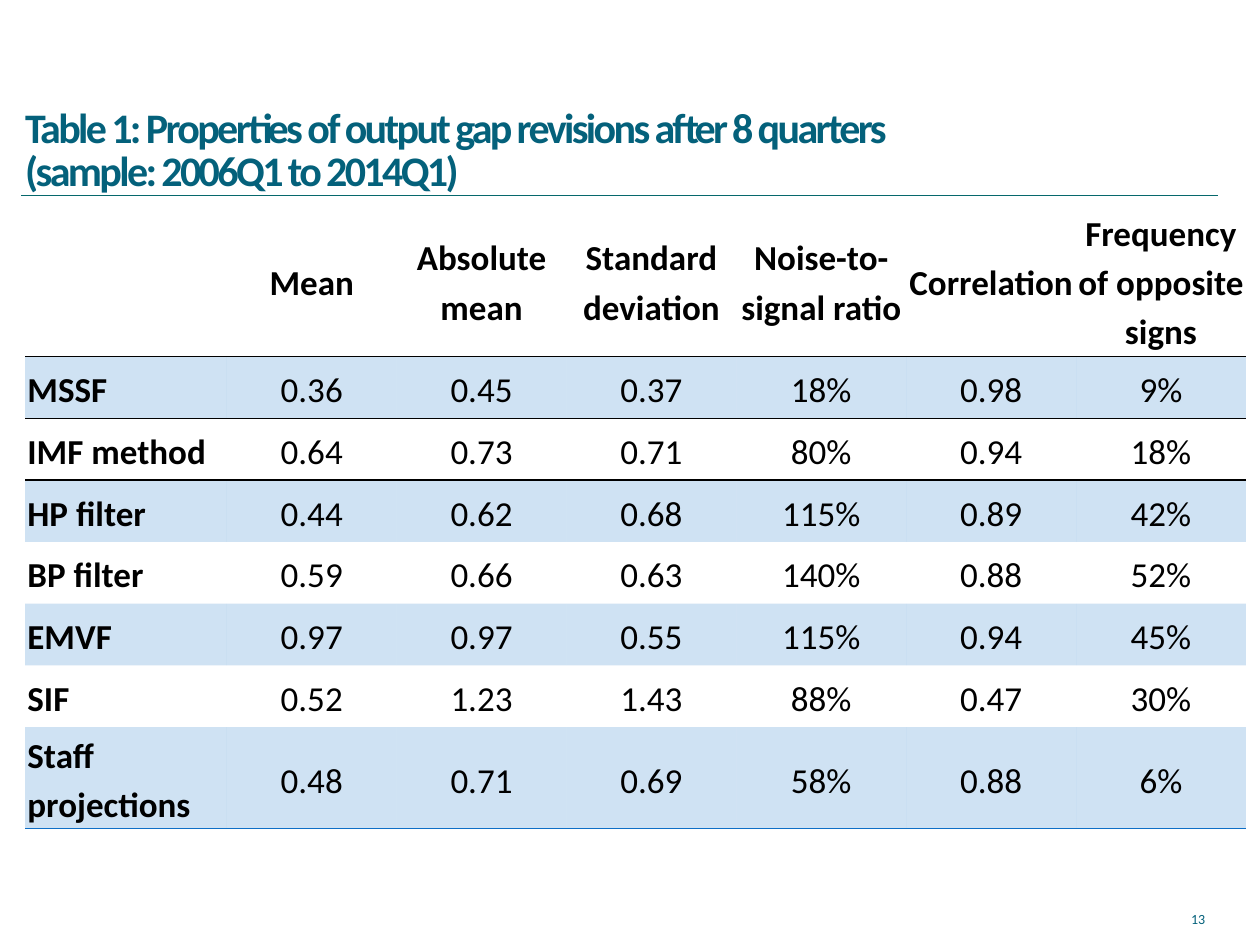
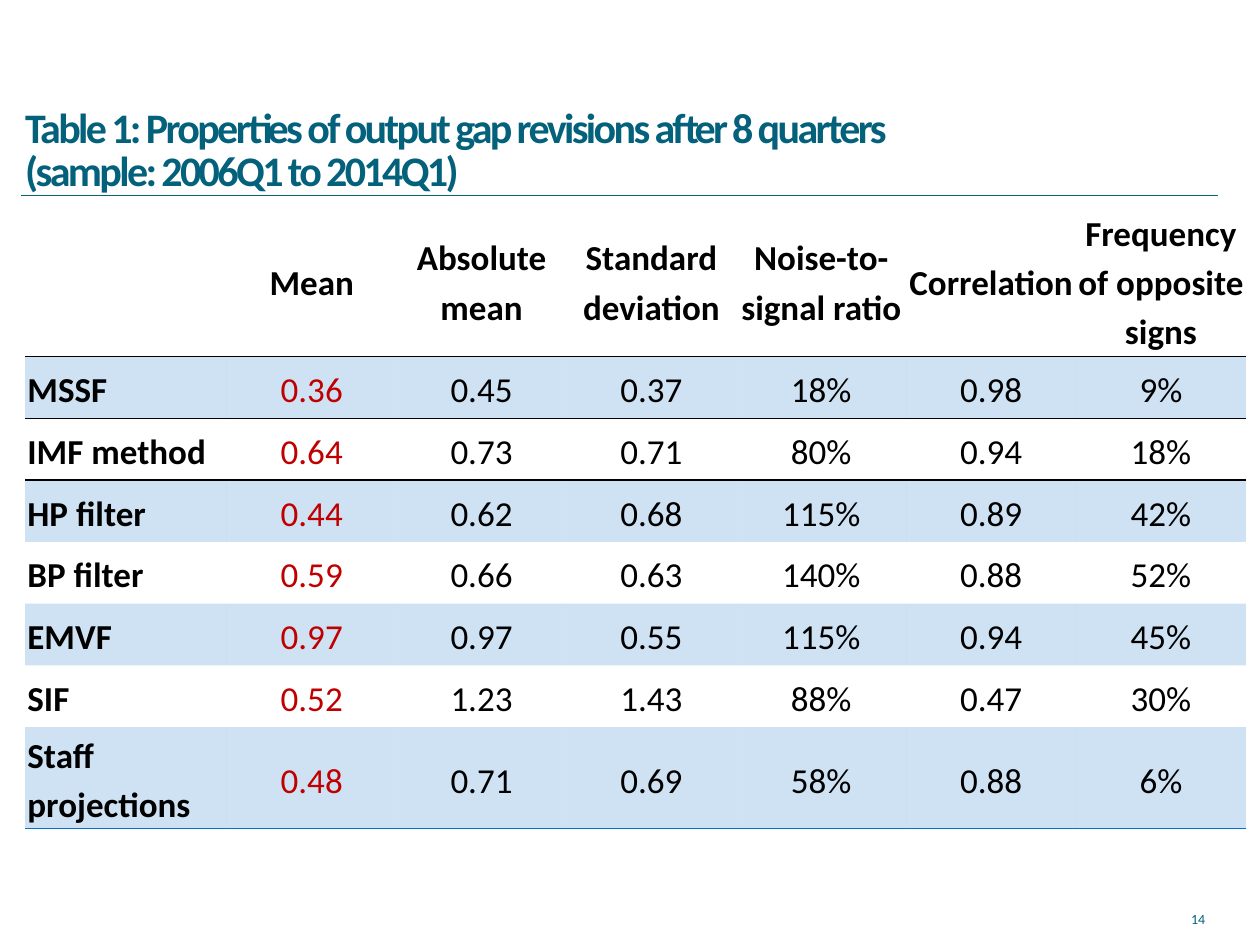
from lxml.etree import SubElement
from pptx import Presentation
from pptx.dml.color import RGBColor
from pptx.enum.shapes import MSO_CONNECTOR
from pptx.enum.text import MSO_ANCHOR, MSO_AUTO_SIZE, PP_ALIGN
from pptx.oxml.ns import qn
from pptx.util import Pt

TITLE = "Table 1: Properties of output gap revisions after 8 quarters\v(sample: 2006Q1 to 2014Q1)"
HEADINGS = ["", "Mean", "Absolute mean", "Standard deviation",
            "Noise-to-signal ratio", "Correlation", "Frequency of opposite signs"]
METHODS = [
    ("MSSF", "0.36", "0.45", "0.37", "18%", "0.98", "9%"),
    ("IMF method", "0.64", "0.73", "0.71", "80%", "0.94", "18%"),
    ("HP filter", "0.44", "0.62", "0.68", "115%", "0.89", "42%"),
    ("BP filter", "0.59", "0.66", "0.63", "140%", "0.88", "52%"),
    ("EMVF", "0.97", "0.97", "0.55", "115%", "0.94", "45%"),
    ("SIF", "0.52", "1.23", "1.43", "88%", "0.47", "30%"),
    ("Staff projections", "0.48", "0.71", "0.69", "58%", "0.88", "6%"),
]
FIRST_PAGE = 13
HIGHLIGHTED_COLUMNS = [None, HEADINGS.index("Mean")]

COLORS = {"title": "04617B", "rule": "06686C", "text": "000000",
          "highlight": "C00000", "band": "0F6FC6"}
BAND_OPACITY = 20
COLUMN_WIDTHS = [115.2] + [97.08] * 6
ROW_HEIGHTS = [87.2] + [35.3] * 6 + [58]
RULES_BELOW_ROW = {0: "text", 1: "text", len(METHODS): "band"}
NO_TABLE_STYLE = "{2D5ABB26-0587-4C30-8999-92F81FD0307C}"


def set_attributes(target, values):
    for name, value in values.items():
        setattr(target, name, value)


def format_font(font, size, color, bold=False):
    set_attributes(font, {"name": "Calibri", "size": Pt(size), "bold": bold})
    font.color.rgb = RGBColor.from_string(COLORS[color])


def place(shape, left, top, width, height):
    set_attributes(shape, {"left": Pt(left), "top": Pt(top),
                           "width": Pt(width), "height": Pt(height)})


def add_title(slide):
    title = slide.shapes.title
    place(title, 14.4, 37.4, 684, 74.2)
    frame = title.text_frame
    set_attributes(frame, {
        "text": TITLE, "word_wrap": True, "auto_size": MSO_AUTO_SIZE.NONE,
        "vertical_anchor": MSO_ANCHOR.BOTTOM, "margin_left": 0,
        "margin_top": Pt(7.2), "margin_right": 0, "margin_bottom": 0})
    paragraph = frame.paragraphs[0]
    set_attributes(paragraph, {"alignment": PP_ALIGN.LEFT, "line_spacing": 0.85})
    for run in paragraph.runs:
        format_font(run.font, 24, "title", True)
        run.font._element.set("spc", "-150")


def add_title_rule(slide):
    rule = slide.shapes.add_connector(
        MSO_CONNECTOR.STRAIGHT, Pt(12.2), Pt(111.6), Pt(696.2), Pt(111.6))
    rule.line.color.rgb = RGBColor.from_string(COLORS["rule"])
    rule.line.width = Pt(0.75)
    SubElement(rule._element.spPr, qn("a:effectLst"))


def add_page_number(slide, number):
    box = slide.shapes.add_textbox(Pt(527.8), Pt(516.2), Pt(168), Pt(18))
    set_attributes(box.text_frame, {"text": str(number), "word_wrap": True,
                                    "vertical_anchor": MSO_ANCHOR.MIDDLE})
    paragraph = box.text_frame.paragraphs[0]
    paragraph.alignment = PP_ALIGN.RIGHT
    format_font(paragraph.runs[0].font, 8, "title")


def add_borders(cell, row):
    properties = cell._tc.get_or_add_tcPr()
    for side, rule_row in (("a:lnT", row - 1), ("a:lnB", row)):
        if rule_row in RULES_BELOW_ROW:
            border = SubElement(properties, qn(side), w=str(Pt(1)))
            fill = SubElement(border, qn("a:solidFill"))
            SubElement(fill, qn("a:srgbClr"), val=COLORS[RULES_BELOW_ROW[rule_row]])


def fill_cell(cell, row):
    if row % 2 == 0:
        cell.fill.background()
        return
    cell.fill.solid()
    cell.fill.fore_color.rgb = RGBColor.from_string(COLORS["band"])
    color = cell._tc.tcPr.find(qn("a:solidFill")).find(qn("a:srgbClr"))
    SubElement(color, qn("a:alpha"), val=str(BAND_OPACITY * 1000))


def write_cell(cell, text, row, column, highlighted_column):
    is_label = row == 0 or column == 0
    margin = Pt(1.3 if is_label else 5)
    set_attributes(cell, {
        "text": text, "vertical_anchor": MSO_ANCHOR.MIDDLE, "margin_left": margin,
        "margin_right": margin, "margin_top": 0, "margin_bottom": 0})
    paragraph = cell.text_frame.paragraphs[0]
    set_attributes(paragraph, {
        "alignment": PP_ALIGN.LEFT if column == 0 else PP_ALIGN.CENTER,
        "line_spacing": 1.15})
    highlighted = row > 0 and column == highlighted_column
    format_font(paragraph.font, 20, "highlight" if highlighted else "text", is_label)
    for run in paragraph.runs:
        format_font(run.font, 20, "highlight" if highlighted else "text", is_label)


def add_revision_table(slide, highlighted_column):
    rows = [HEADINGS, *METHODS]
    table = slide.shapes.add_table(
        len(rows), len(HEADINGS), Pt(14.4), Pt(116.6),
        Pt(sum(COLUMN_WIDTHS)), Pt(sum(ROW_HEIGHTS))).table
    set_attributes(table, {"first_row": False, "horz_banding": False})
    table._tbl.tblPr.find(qn("a:tableStyleId")).text = NO_TABLE_STYLE
    for column, width in zip(table.columns, COLUMN_WIDTHS):
        column.width = Pt(width)
    for row, height in zip(table.rows, ROW_HEIGHTS):
        row.height = Pt(height)
    for row, texts in enumerate(rows):
        for column, text in enumerate(texts):
            cell = table.cell(row, column)
            add_borders(cell, row)
            fill_cell(cell, row)
            write_cell(cell, text, row, column, highlighted_column)


def main():
    presentation = Presentation()
    set_attributes(presentation, {"slide_width": Pt(720), "slide_height": Pt(540)})
    title_only = presentation.slide_layouts.get_by_name("Title Only")
    for number, highlighted_column in enumerate(HIGHLIGHTED_COLUMNS, FIRST_PAGE):
        slide = presentation.slides.add_slide(title_only)
        add_title_rule(slide)
        add_title(slide)
        add_page_number(slide, number)
        add_revision_table(slide, highlighted_column)
    presentation.save("out.pptx")


if __name__ == "__main__":
    main()
